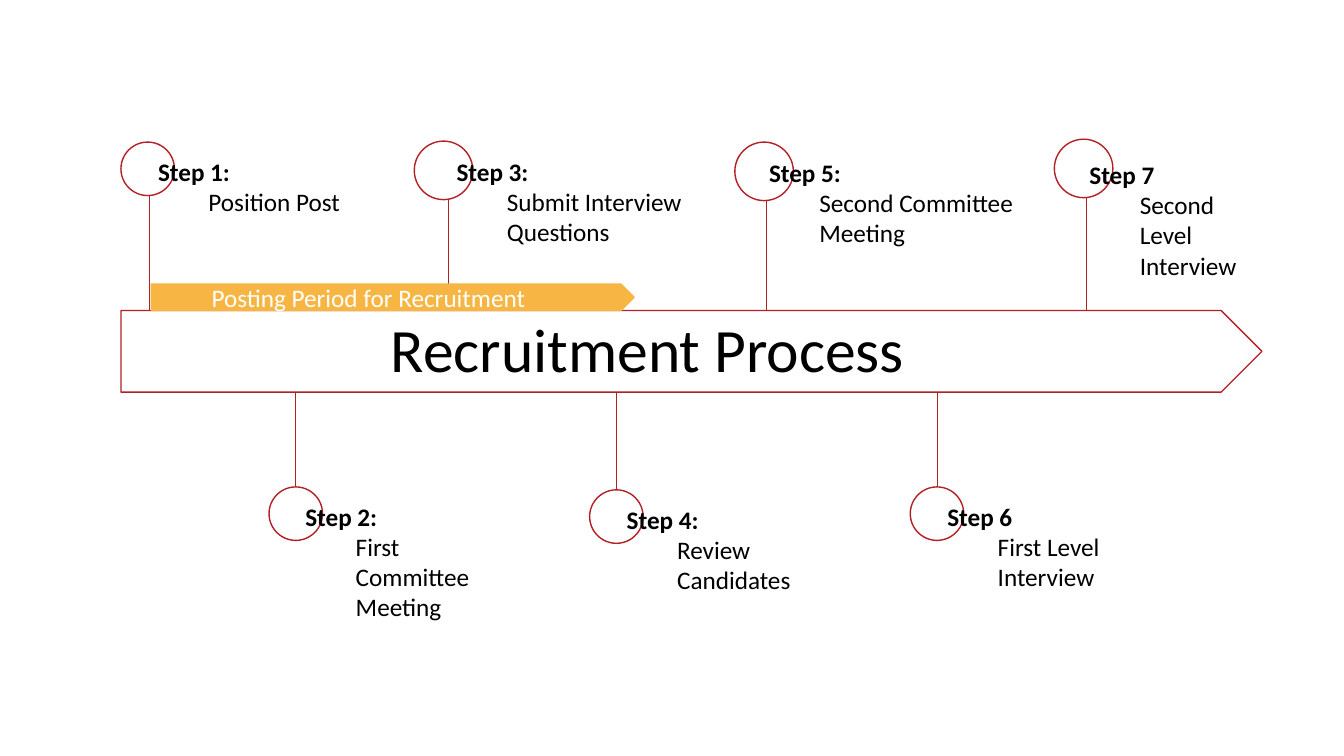
import pptx
import pptx.util
import pptx.dml.color
import pptx.enum.shapes
import pptx.enum.text
import pptx.oxml.ns
import lxml.etree

Pt = pptx.util.Pt
RGB = pptx.dml.color.RGBColor
Kind = pptx.enum.shapes.MSO_SHAPE
Anchor = pptx.enum.text.MSO_ANCHOR
Align = pptx.enum.text.PP_ALIGN
Fit = pptx.enum.text.MSO_AUTO_SIZE

RED = RGB(0xB3, 0x1F, 0x24)
GOLD = RGB(0xF7, 0xB5, 0x43)
WHITE = RGB(0xFF, 0xFF, 0xFF)
BLACK = RGB(0, 0, 0)

SMALL, LARGE = 38.2, 41.8  # circle sizes
STEM = {SMALL: 106, LARGE: 117}  # stem length for each circle size

# label, task, size, circle (x, y), stem top (x, y), text (x, y, width), text rows
STEPS = [
    ("Step 1:", "Position Post", SMALL, (86.4, 101.5), (106.6, 130.3), (105.8, 108, 180.7), 2),
    ("Step 2:", "First Committee Meeting", SMALL, (192.2, 347.8), (211, 248.4), (211, 354.2, 143.3), 4),
    ("Step 3:", "Submit Interview Questions", LARGE, (295.9, 100.8), (320.4, 136.1), (319, 108, 214.6), 3),
    ("Step 4:", "Review Candidates", SMALL, (421.2, 349.9), (440.6, 262.1), (440.6, 356.4, 131.8), 3),
    ("Step 5:", "Second Committee Meeting", LARGE, (524.9, 101.5), (547.2, 110.2), (542.2, 108.7, 214.6), 3),
    ("Step 6", "First Level Interview", SMALL, (650.2, 347.8), (669.6, 259.9), (669.6, 354.2, 131.8), 3),
    ("Step 7", "Second Level Interview", LARGE, (753.1, 99.4), (776.2, 108.7), (771.1, 110.2, 144), 4),
]


class Chart:
    font = "Calibri"
    size = 18

    def __init__(self, slide):
        self.slide = slide

    def stem(self, x, y, length):
        line = self.slide.shapes.add_connector(
            pptx.enum.shapes.MSO_CONNECTOR.STRAIGHT, Pt(x), Pt(y), Pt(x), Pt(y + length))
        line.line.color.rgb = RED
        line.line.width = Pt(0.5)
        lxml.etree.SubElement(line._element.spPr, pptx.oxml.ns.qn("a:effectLst"))

    def shape(self, kind, x, y, w, h, fill, edge):
        item = self.slide.shapes.add_shape(kind, Pt(x), Pt(y), Pt(w), Pt(h))
        item.shadow.inherit = False
        item.fill.solid()
        item.fill.fore_color.rgb = fill
        item.line.color.rgb = edge
        item.line.width = Pt(1)
        return item

    def box(self, x, y, w, h):
        frame = self.slide.shapes.add_textbox(Pt(x), Pt(y), Pt(w), Pt(h)).text_frame
        frame.word_wrap = True
        return frame

    def label(self, para, text, color=BLACK, bold=False, size=size):
        run = para.add_run()
        run.text = text
        run.font.name = self.font
        run.font.size = Pt(size)
        run.font.bold = bold
        run.font.color.rgb = color

    def indent(self, para):
        """Set the paragraph half an inch in, on the second level."""
        para.level = 1
        para.alignment = Align.LEFT
        props = para._p.get_or_add_pPr()
        props.set("marL", str(Pt(36)))
        props.set("indent", "0")

    def step(self, name, task, size, ring, top, text, rows):
        self.stem(*top, STEM[size])
        self.shape(Kind.OVAL, *ring, size, size, WHITE, RED)
        frame = self.box(*text, 7.9 + 21.6 * rows)
        frame.auto_size = Fit.SHAPE_TO_FIT_TEXT
        self.label(frame.paragraphs[0], name, bold=True)
        para = frame.add_paragraph()
        self.indent(para)
        self.label(para, task)

    def title(self, text, x, y, w, h):
        frame = self.box(x, y, w, h)
        frame.vertical_anchor = Anchor.MIDDLE
        para = frame.paragraphs[0]
        para.alignment = Align.CENTER
        para.line_spacing = 0.9
        self.label(para, text, size=44)

    def period(self, text, x, y, w, h):
        frame = self.shape(Kind.PENTAGON, x, y, w, h, GOLD, GOLD).text_frame
        frame.word_wrap = True
        frame.vertical_anchor = Anchor.MIDDLE
        self.indent(frame.paragraphs[0])
        self.label(frame.paragraphs[0], text, WHITE)


def main():
    deck = pptx.Presentation()
    deck.slide_width, deck.slide_height = Pt(960), Pt(540)
    chart = Chart(deck.slides.add_slide(deck.slide_layouts[6]))
    for step in STEPS:
        chart.step(*step)
    chart.shape(Kind.PENTAGON, 86.4, 221.8, 815, 58.3, WHITE, RED)
    chart.title("Recruitment Process ", 16.6, 222.5, 902.2, 58.3)
    chart.period("Posting Period for Recruitment", 108, 203, 344.9, 18.7)
    deck.save("out.pptx")


if __name__ == "__main__":
    main()
